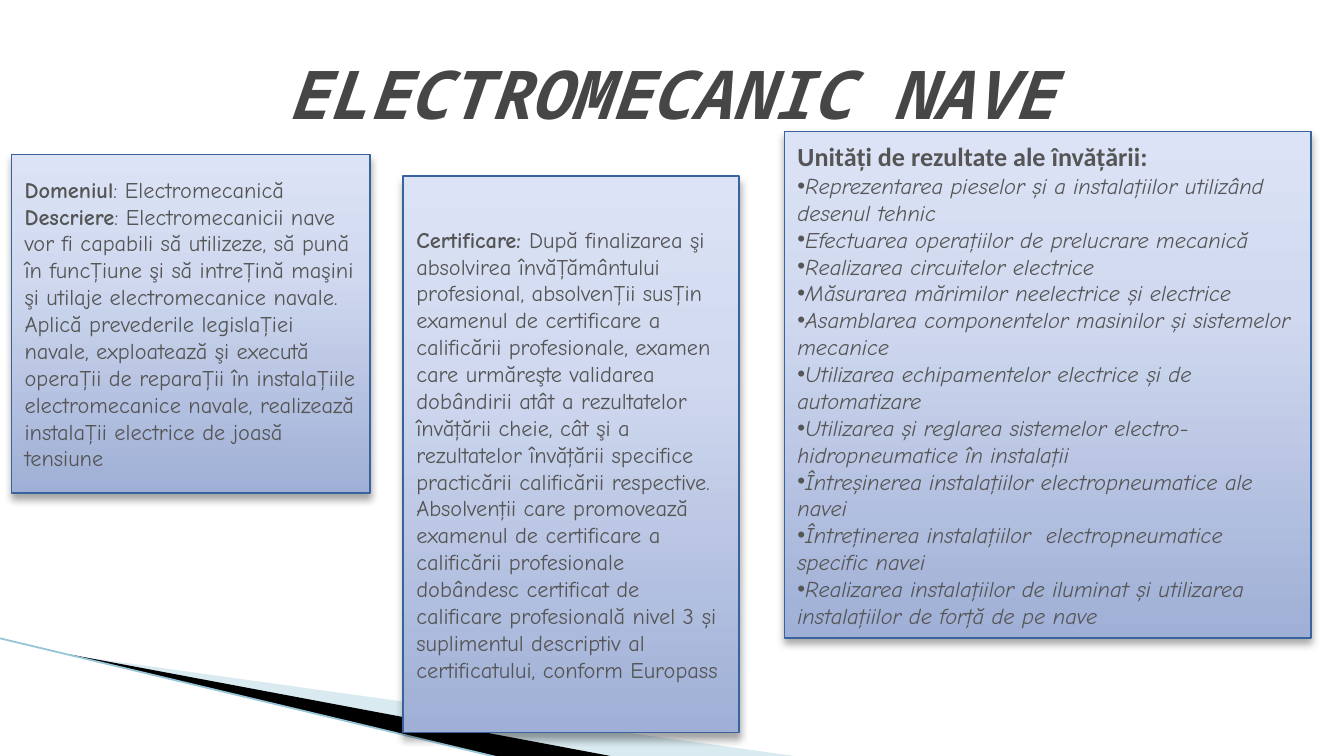
"""Build the slide describing the ship electromechanic qualification."""
from lxml.etree import SubElement
from pptx import Presentation
from pptx.dml.color import RGBColor
from pptx.enum.shapes import MSO_CONNECTOR, MSO_SHAPE
from pptx.enum.text import MSO_ANCHOR, MSO_AUTO_SIZE, PP_ALIGN
from pptx.oxml import parse_xml
from pptx.oxml.ns import nsdecls, qn
from pptx.util import Inches, Pt

COLORS = {
    "title": "464646", "text": "555555", "border": "39639D", "shadow": "000000",
    "bottom": "9FAFD6", "middle": "D0D9EF", "top": "DCE3F6",
    "pale": "A0CBDC", "dark": "000000", "edge": "97C5D8",
}
presentation = Presentation()
presentation.slide_width = Inches(10)
presentation.slide_height = round(presentation.slide_width * 9 / 16)
slide = presentation.slides.add_slide(presentation.slide_layouts[6])
COLUMN = presentation.slide_width / 100
ROW = presentation.slide_height / 100


def place(left, top, width, height):
    return [round(n) for n in (left * COLUMN, top * ROW, width * COLUMN, height * ROW)]


def style(font, name, size, color):
    font.name, font.size = name, Pt(size)
    font.color.rgb = RGBColor.from_string(COLORS[color])


waves = [
    ("pale", 40, [(5.5, 86.75), (59.5, 100.1), (45.6, 100.1)]),
    ("dark", 100, [(5.3, 86.6), (45.7, 100.1), (37.2, 100.2), (5.4, 86.75)]),
]
for color, opacity, points in waves:
    corners = [(round(x * COLUMN), round(y * ROW)) for x, y in points]
    builder = slide.shapes.build_freeform(*corners[0])
    builder.add_line_segments(corners[1:], close=True)
    wave = builder.convert_to_shape()
    wave.shadow.inherit = False
    wave.fill.solid()
    wave.fill.fore_color.rgb = RGBColor.from_string(COLORS[color])
    wave.line.fill.background()
    tint = wave.fill._xPr.find(".//" + qn("a:srgbClr"))
    SubElement(tint, qn("a:alpha"), val=str(opacity * 1000))

edge = slide.shapes.add_connector(MSO_CONNECTOR.STRAIGHT, *place(-0.1, 84.4, 37.1, 100.2))
edge.line.color.rgb = RGBColor.from_string(COLORS["edge"])
edge.line.width = Pt(0.95)
SubElement(edge._element.spPr, qn("a:effectLst"))

title = slide.shapes.add_textbox(*place(3.3, 4.1, 93.2, 16.35))
frame = title.text_frame
frame.word_wrap = True
frame.vertical_anchor = MSO_ANCHOR.MIDDLE
frame.margin_left = frame.margin_right = frame.margin_top = frame.margin_bottom = 0
paragraph = frame.paragraphs[0]
paragraph.text = "ELECTROMECANIC NAVE"
paragraph.alignment = PP_ALIGN.CENTER
style(paragraph.font, "Noto Sans Mono", 36, "title")
paragraph.font.bold = paragraph.font.italic = True

units = [
    "Reprezentarea pieselor și a instalațiilor utilizând desenul tehnic",
    "Efectuarea operațiilor de prelucrare mecanică",
    "Realizarea circuitelor electrice",
    "Măsurarea mărimilor neelectrice și electrice",
    "Asamblarea componentelor masinilor și sistemelor mecanice",
    "Utilizarea echipamentelor electrice și de automatizare",
    "Utilizarea și reglarea sistemelor electro-hidropneumatice în instalații",
    "Întreșinerea instalațiilor electropneumatice ale navei",
    "Întreținerea instalațiilor  electropneumatice specific navei",
    "Realizarea instalațiilor de iluminat și utilizarea instalațiilor de forță de pe nave",
]
cards = [
    ((0.85, 20.4, 26.7, 44.8), [
        ("Domeniul", ": Electromecanică"),
        ("Descriere", ": Electromecanicii nave vor fi capabili să utilizeze, să pună în "
         "funcţiune şi să intreţină maşini şi utilaje electromecanice navale.\n"
         "Aplică prevederile legislaţiei navale, exploatează şi execută operaţii de "
         "reparaţii în instalaţiile electromecanice navale, realizează instalaţii "
         "electrice de joasă tensiune"),
    ]),
    ((58.35, 17.4, 39.2, 67),
     [("Unități de rezultate ale învățării:", "")] + [("", unit) for unit in units]),
    ((30, 23.3, 25, 73.6), [
        ("Certificare: ", "După finalizarea şi absolvirea învăţământului profesional, "
         "absolvenţii susţin examenul de certificare a calificării profesionale, examen "
         "care urmăreşte validarea dobândirii atât a rezultatelor învățării cheie, cât şi "
         "a rezultatelor învățării specifice practicării calificării respective. "
         "Absolvenții care promovează examenul de certificare a calificării profesionale "
         "dobândesc certificat de calificare profesională nivel 3 și suplimentul "
         "descriptiv al certificatului, conform Europass"),
    ]),
]
for box, entries in cards:
    card = slide.shapes.add_shape(MSO_SHAPE.RECTANGLE, *place(*box))
    card.fill.gradient()
    card.fill.gradient_angle = 90
    stops = card.fill._xPr.find(".//" + qn("a:gsLst"))
    for stop in list(stops):
        stops.remove(stop)
    for position, color in ((0, "bottom"), (65, "middle"), (100, "top")):
        stop = SubElement(stops, qn("a:gs"), pos=str(position * 1000))
        SubElement(stop, qn("a:srgbClr"), val=COLORS[color])
    card.line.color.rgb = RGBColor.from_string(COLORS["border"])
    card.line.width = Pt(0.75)
    card.shadow.inherit = False
    card._element.spPr.find(qn("a:effectLst")).append(parse_xml(
        f'<a:outerShdw {nsdecls("a")} blurRad="{Pt(4)}" dist="{Pt(3)}" dir="5400000" '
        f'rotWithShape="0"><a:srgbClr val="{COLORS["shadow"]}"><a:alpha val="35000"/>'
        '</a:srgbClr></a:outerShdw>'))
    frame = card.text_frame
    frame.word_wrap = True
    frame.auto_size = MSO_AUTO_SIZE.SHAPE_TO_FIT_TEXT
    frame.vertical_anchor = MSO_ANCHOR.MIDDLE
    for index, (label, body) in enumerate(entries):
        paragraph = frame.add_paragraph() if index else frame.paragraphs[0]
        paragraph.alignment = PP_ALIGN.LEFT
        style(paragraph.font, *(("Comic Neue", 12) if body else ("Calibri", 14)), "text")
        if label:
            run = paragraph.add_run()
            run.text = label
            run.font.bold = True
        else:
            paragraph.font.italic = True
            properties = paragraph._p.get_or_add_pPr()
            properties.insert(0, parse_xml(f'<a:buFont {nsdecls("a")} typeface="Arial"/>'))
            properties.insert(1, parse_xml(f'<a:buChar {nsdecls("a")} char="•"/>'))
        for number, line in enumerate(body.split("\n") if body else []):
            if number:
                paragraph.add_line_break()
            paragraph.add_run().text = line

presentation.save("out.pptx")
